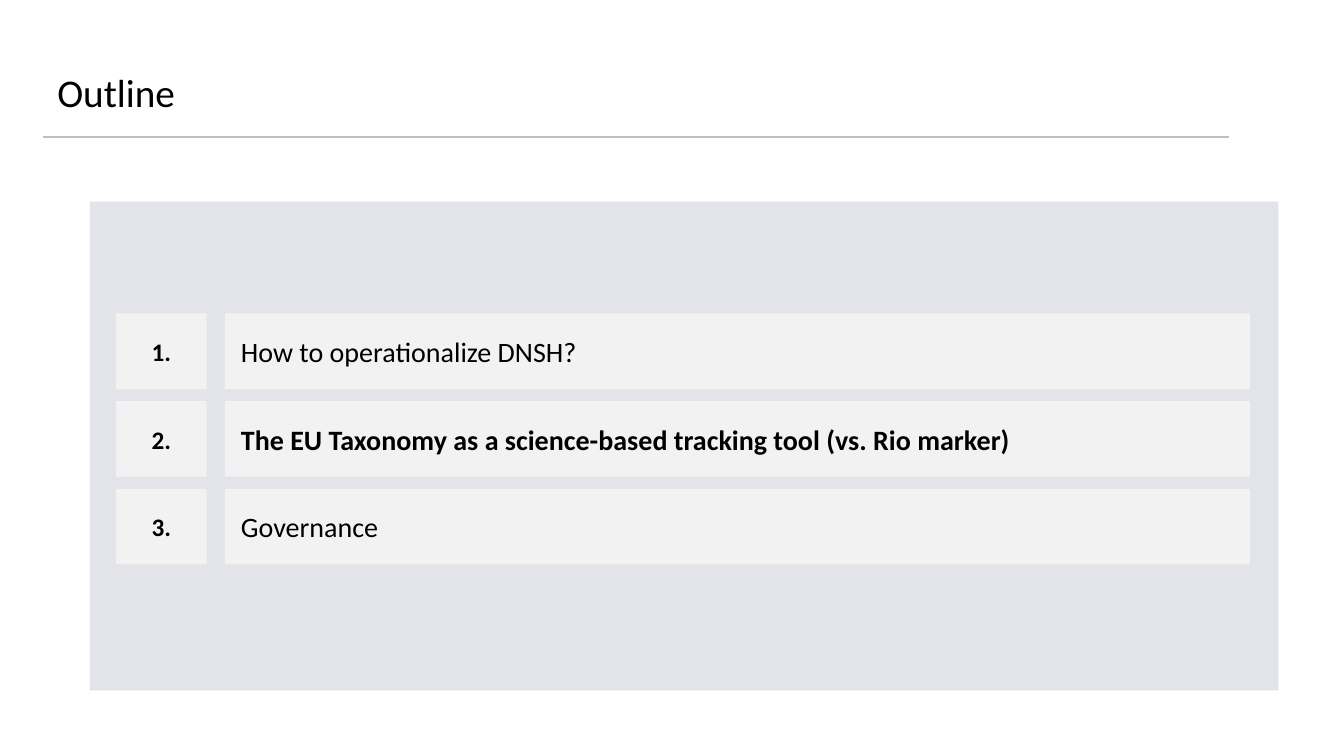
"""Build the outline slide with three numbered topics on a panel."""
import pptx
import pptx.dml.color
import pptx.enum.shapes
import pptx.enum.text
import pptx.oxml
import pptx.oxml.ns
import pptx.util

TITLE = "Outline"
TOPICS = [
    ("How to operationalize DNSH?", False),
    ("The EU Taxonomy as a science-based tracking tool (vs. Rio marker)", True),
    ("Governance", False),
]
COLORS = {"rule": "BFBFBF", "panel": "E3E4EA", "card": "F2F2F2", "text": "000000"}
FONT = "Calibri"
SLIDE_SIZE = (13.33, 7.5)
TITLE_BOX = (0.47, 0.68, 10.43, 0.74)
RULE = (0.43, 1.36, 12.19, 1.36)
PANEL = (0.89, 2, 11.79, 4.85)
NUMBER_COLUMN = (1.15, 0.9)
TOPIC_COLUMN = (2.23, 10.17)
FIRST_ROW, ROW_PITCH, ROW_HEIGHT = 3.11, 0.87, 0.75


def inches(values):
    return [pptx.util.Inches(value) for value in values]


def color(name):
    return pptx.dml.color.RGBColor.from_string(COLORS[name])


def add_text(shape, text, size, bold=False, align=pptx.enum.text.PP_ALIGN.LEFT):
    shape.text_frame.word_wrap = True
    paragraph = shape.text_frame.paragraphs[0]
    paragraph.alignment = align
    run = paragraph.add_run()
    run.text = text
    run.font.name = FONT
    run.font.size = pptx.util.Pt(size)
    run.font.bold = bold
    run.font.color.rgb = color("text")
    return paragraph


def add_block(slide, box, fill):
    shape = slide.shapes.add_shape(pptx.enum.shapes.MSO_SHAPE.RECTANGLE, *inches(box))
    shape.shadow.inherit = False
    shape.fill.solid()
    shape.fill.fore_color.rgb = color(fill)
    shape.line.fill.background()
    return shape


def add_card(slide, column, row, text, size, bold, align):
    left, width = column
    top = FIRST_ROW + row * ROW_PITCH
    card = add_block(slide, (left, top, width, ROW_HEIGHT), "card")
    frame = card.text_frame
    frame.margin_left = frame.margin_right = pptx.util.Inches(0.16)
    frame.margin_top = frame.margin_bottom = 0
    frame.vertical_anchor = pptx.enum.text.MSO_ANCHOR.MIDDLE
    add_text(card, text, size, bold, align)


def add_rule(slide):
    rule = slide.shapes.add_connector(
        pptx.enum.shapes.MSO_CONNECTOR.STRAIGHT, *inches(RULE))
    rule.line.color.rgb = color("rule")
    rule.line.width = pptx.util.Pt(1)
    properties = rule.element.find(pptx.oxml.ns.qn("p:spPr"))
    properties.append(pptx.oxml.parse_xml(
        f"<a:effectLst {pptx.oxml.ns.nsdecls('a')}/>"))


def main():
    presentation = pptx.Presentation()
    presentation.slide_width, presentation.slide_height = inches(SLIDE_SIZE)
    slide = presentation.slides.add_slide(presentation.slide_layouts[6])
    add_rule(slide)
    add_block(slide, PANEL, "panel")
    alignment = pptx.enum.text.PP_ALIGN
    for row, (topic, bold) in enumerate(TOPICS):
        add_card(slide, NUMBER_COLUMN, row, f"{row + 1}.", 18, True, alignment.CENTER)
        add_card(slide, TOPIC_COLUMN, row, topic, 20, bold, alignment.LEFT)
    title = slide.shapes.add_textbox(*inches(TITLE_BOX))
    add_text(title, TITLE, 28).line_spacing = 0.9
    presentation.save("out.pptx")


if __name__ == "__main__":
    main()
